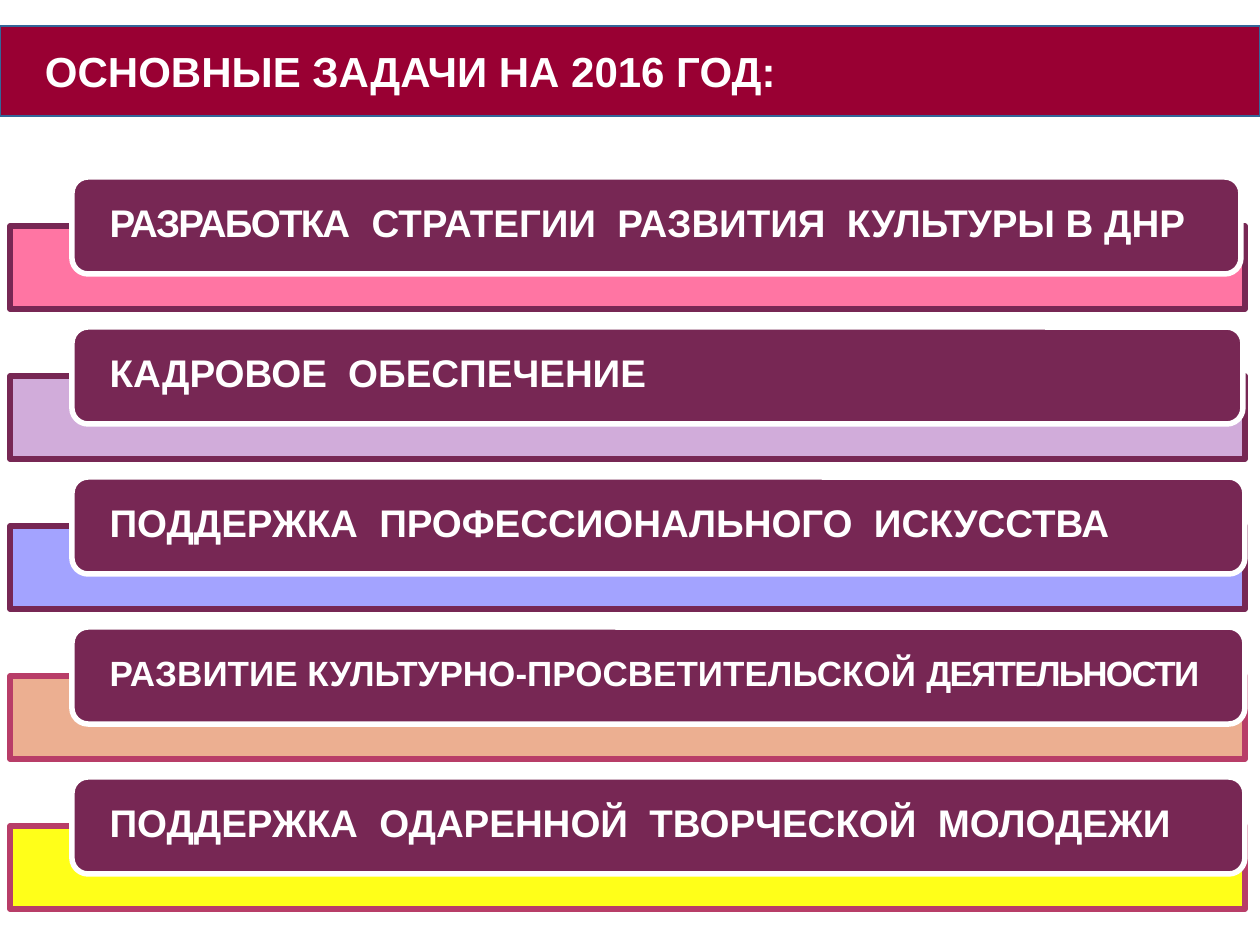
from pptx import Presentation
from pptx.dml.color import RGBColor
from pptx.enum.shapes import MSO_SHAPE
from pptx.enum.text import MSO_ANCHOR, MSO_AUTO_SIZE, PP_ALIGN
from pptx.oxml.ns import qn
from pptx.util import Pt
from lxml.etree import SubElement

SCALE = 914400 / 126
PITCH = 150
PLUM, ROSE, WHITE = "772754", "B83D68", "FFFFFF"
FRAME = {"word_wrap": True, "auto_size": MSO_AUTO_SIZE.NONE,
         "vertical_anchor": MSO_ANCHOR.MIDDLE,
         "margin_top": 0, "margin_bottom": 0}
FONT = {"name": "Arial", "bold": True}
TASKS = [
    ("FF6699", PLUM, 1169, 22,
     [("РАЗРАБОТКА", -1), ("  СТРАТЕГИИ  РАЗВИТИЯ  КУЛЬТУРЫ В ДНР", 0)]),
    ("CDA3D6", PLUM, 1171, 22, [("КАДРОВОЕ  ОБЕСПЕЧЕНИЕ", 0)]),
    ("9999FF", PLUM, 1173, 22,
     [("ПОДДЕРЖКА  ПРОФЕССИОНАЛЬНОГО  ИСКУССТВА", 0)]),
    ("EBA786", ROSE, 1173, 20,
     [("РАЗВИТИЕ КУЛЬТУРНО-ПРОСВЕТИТЕЛЬСКОЙ ", 0), ("ДЕЯТЕЛЬНОСТИ", -1)]),
    ("FFFF00", ROSE, 1173, 22,
     [("ПОДДЕРЖКА  ОДАРЕННОЙ  ТВОРЧЕСКОЙ  МОЛОДЕЖИ", 0)]),
]


def px(num):
    return round(num * SCALE)


def put(item, values):
    for name, value in values.items():
        setattr(item, name, value)


def paint(color, code):
    color.rgb = RGBColor.from_string(code)


def style(shape, fill, edge, width):
    shape.fill.solid()
    paint(shape.fill.fore_color, fill)
    shape.line.width = Pt(width)
    paint(shape.line.color, edge)


def add_box(slide, kind, area, fill, edge):
    shape = slide.shapes.add_shape(kind, *map(px, area))
    shape.shadow.inherit = False
    style(shape, fill, edge, 3.15)
    return shape


def write(shape, parts, size, inset, pace):
    frame = shape.text_frame
    put(frame, FRAME | {"margin_left": px(inset), "margin_right": px(inset)})
    para = frame.paragraphs[0]
    put(para, {"alignment": PP_ALIGN.LEFT, "line_spacing": pace})
    for text, gap in parts:
        run = para.add_run()
        run.text = text
        put(run.font, FONT | {"size": Pt(size)})
        paint(run.font.color, WHITE)
        if gap:
            run.font._element.set("spc", str(gap * 100))


def add_title(slide, text):
    title = slide.shapes.title
    put(title, {"left": 0, "top": px(26), "width": px(1260), "height": px(90)})
    style(title, "990033", "336699", 0.75)
    write(title, [(text, 0)], 24, 45, 1.0)


def add_bar(slide, top, fill, edge):
    bar = add_box(slide, MSO_SHAPE.RECTANGLE, (10, top, 1235, 83), fill, edge)
    color = bar._element.spPr.find(qn("a:solidFill"))[0]
    SubElement(color, qn("a:alpha"), val="90000")


def add_card(slide, top, width, parts, size):
    card = add_box(slide, MSO_SHAPE.ROUNDED_RECTANGLE,
                   (72, top, width, 97), PLUM, WHITE)
    write(card, parts, size, 33, 0.9)


def main():
    deck = Presentation()
    put(deck, {"slide_width": px(1260), "slide_height": px(945)})
    slide = deck.slides.add_slide(deck.slide_layouts[5])
    add_title(slide, "ОСНОВНЫЕ ЗАДАЧИ НА 2016 ГОД:")
    for row, (fill, edge, width, size, parts) in enumerate(TASKS):
        top = 177 + row * PITCH
        add_bar(slide, top + 49, fill, edge)
        add_card(slide, top, width, parts, size)
    deck.save("out.pptx")


if __name__ == "__main__":
    main()
